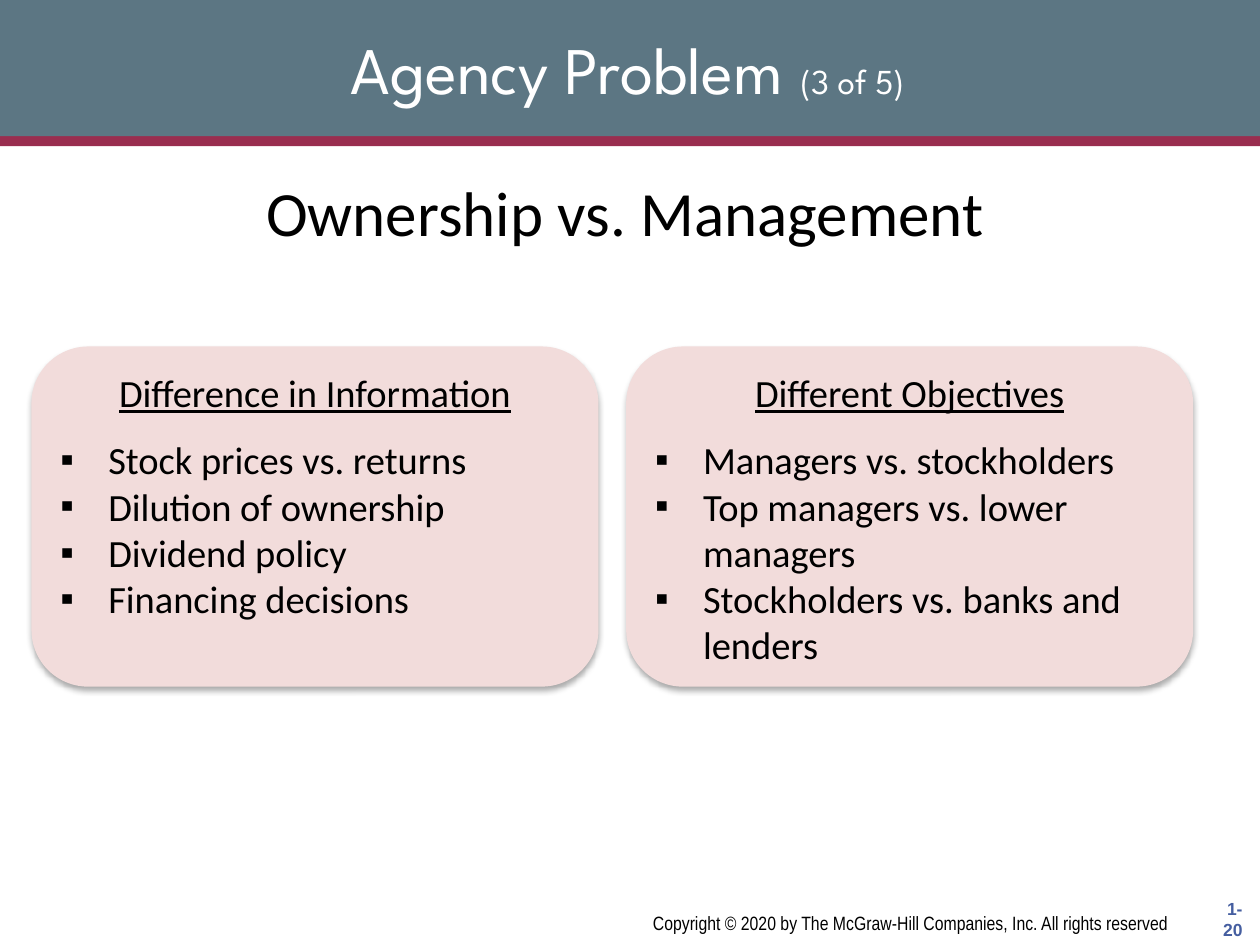
"""Build the Agency Problem slide comparing ownership and management."""
import pptx
import pptx.util
import pptx.dml.color
import pptx.enum.shapes
import pptx.enum.text
import pptx.oxml
import pptx.oxml.ns

Inches, Pt = pptx.util.Inches, pptx.util.Pt
RGB = pptx.dml.color.RGBColor
SHAPE = pptx.enum.shapes.MSO_SHAPE
ALIGN = pptx.enum.text.PP_ALIGN
ANCHOR = pptx.enum.text.MSO_ANCHOR

BLACK = RGB(0x00, 0x00, 0x00)
WHITE = RGB(0xFF, 0xFF, 0xFF)
SLATE = RGB(0x5C, 0x76, 0x83)
CRIMSON = RGB(0x99, 0x2D, 0x4F)
PINK = RGB(0xF2, 0xDC, 0xDB)
BLUE = RGB(0x45, 0x5E, 0xA0)

NS = pptx.oxml.ns.nsdecls("a")
SHADOW = (
    f'<a:effectLst {NS}><a:outerShdw blurRad="{Pt(3.5)}" dist="{Pt(2.2)}" '
    'dir="5400000" rotWithShape="0"><a:srgbClr val="000000">'
    '<a:alpha val="32000"/></a:srgbClr></a:outerShdw></a:effectLst>'
)
BULLET = (
    f'<a:buFont {NS} typeface="Arial"/>',
    f'<a:buChar {NS} char="▪"/>',
)


def add_run(p, text, color, **fmt):
    r = p.add_run()
    r.text = text
    for name, value in fmt.items():
        setattr(r.font, name, value)
    r.font.color.rgb = color


def add_box(s, kind, box, fill):
    sp = s.shapes.add_shape(kind, *map(Inches, box))
    sp.shadow.inherit = False
    sp.fill.solid()
    sp.fill.fore_color.rgb = fill
    sp.line.fill.background()
    return sp


prs = pptx.Presentation()
prs.slide_width, prs.slide_height = Inches(10), Inches(7.5)
s = prs.slides.add_slide(prs.slide_layouts[5])

add_box(s, SHAPE.RECTANGLE, (0, 1.08, 10, 0.08), CRIMSON)
add_box(s, SHAPE.RECTANGLE, (0, 0, 10, 1.08), SLATE)

title = s.shapes.title
s.shapes.element.append(title.element)
title.left, title.top, title.width, title.height = map(Inches, (0.25, 0.08, 9.46, 0.92))
tf = title.text_frame
tf.vertical_anchor = ANCHOR.MIDDLE
p = tf.paragraphs[0]
p.alignment = ALIGN.CENTER
for text, size in (("Agency Problem ", 38), ("(3 of 5)", 20)):
    add_run(p, text, WHITE, name="League Spartan", size=Pt(size))

labels = [
    ((9.46, 7.08, 0.5, 0.42), "1- 20", ALIGN.RIGHT, ANCHOR.MIDDLE, False,
     BLUE, {"name": "Arial", "size": Pt(10), "bold": True}),
    ((3.58, 7.18, 5.83, 0.29),
     "Copyright © 2020 by The McGraw-Hill Companies, Inc. All rights reserved ",
     ALIGN.RIGHT, ANCHOR.TOP, True, BLACK, {"name": "Arial Narrow", "size": Pt(11)}),
    ((1.17, 1.33, 7.58, 0.71), "Ownership vs. Management", ALIGN.CENTER,
     ANCHOR.TOP, True, BLACK, {"name": "Calibri", "size": Pt(36)}),
]
for box, text, align, anchor, wrap, color, fmt in labels:
    tf = s.shapes.add_textbox(*map(Inches, box)).text_frame
    tf.word_wrap = wrap
    tf.vertical_anchor = anchor
    p = tf.paragraphs[0]
    p.alignment = align
    add_run(p, text, color, **fmt)

cards = [
    ("Difference in Information",
     ["Stock prices vs. returns", "Dilution of ownership",
      "Dividend policy", "Financing decisions"]),
    ("Different Objectives",
     ["Managers vs. stockholders", "Top managers vs. lower managers",
      "Stockholders vs. banks and lenders"]),
]
body = {"name": "Calibri", "size": Pt(22)}
for i, (heading, items) in enumerate(cards):
    sp = add_box(s, SHAPE.ROUNDED_RECTANGLE, (0.25 + 4.72 * i, 2.75, 4.5, 2.7), PINK)
    props = sp.element.spPr
    props.remove(props.find(pptx.oxml.ns.qn("a:effectLst")))
    props.append(pptx.oxml.parse_xml(SHADOW))
    tf = sp.text_frame
    tf.word_wrap = True
    tf.vertical_anchor = ANCHOR.TOP
    p = tf.paragraphs[0]
    p.alignment = ALIGN.CENTER
    add_run(p, heading, BLACK, underline=True, **body)
    for j, item in enumerate(items):
        p = tf.add_paragraph()
        p.alignment = ALIGN.LEFT
        p.space_before = Pt(0 if j else 12)
        pPr = p._p.get_or_add_pPr()
        pPr.set("marL", str(Inches(0.38)))
        pPr.set("indent", str(-Inches(0.38)))
        for xml in BULLET:
            pPr.append(pptx.oxml.parse_xml(xml))
        add_run(p, item, BLACK, **body)

prs.save("out.pptx")
